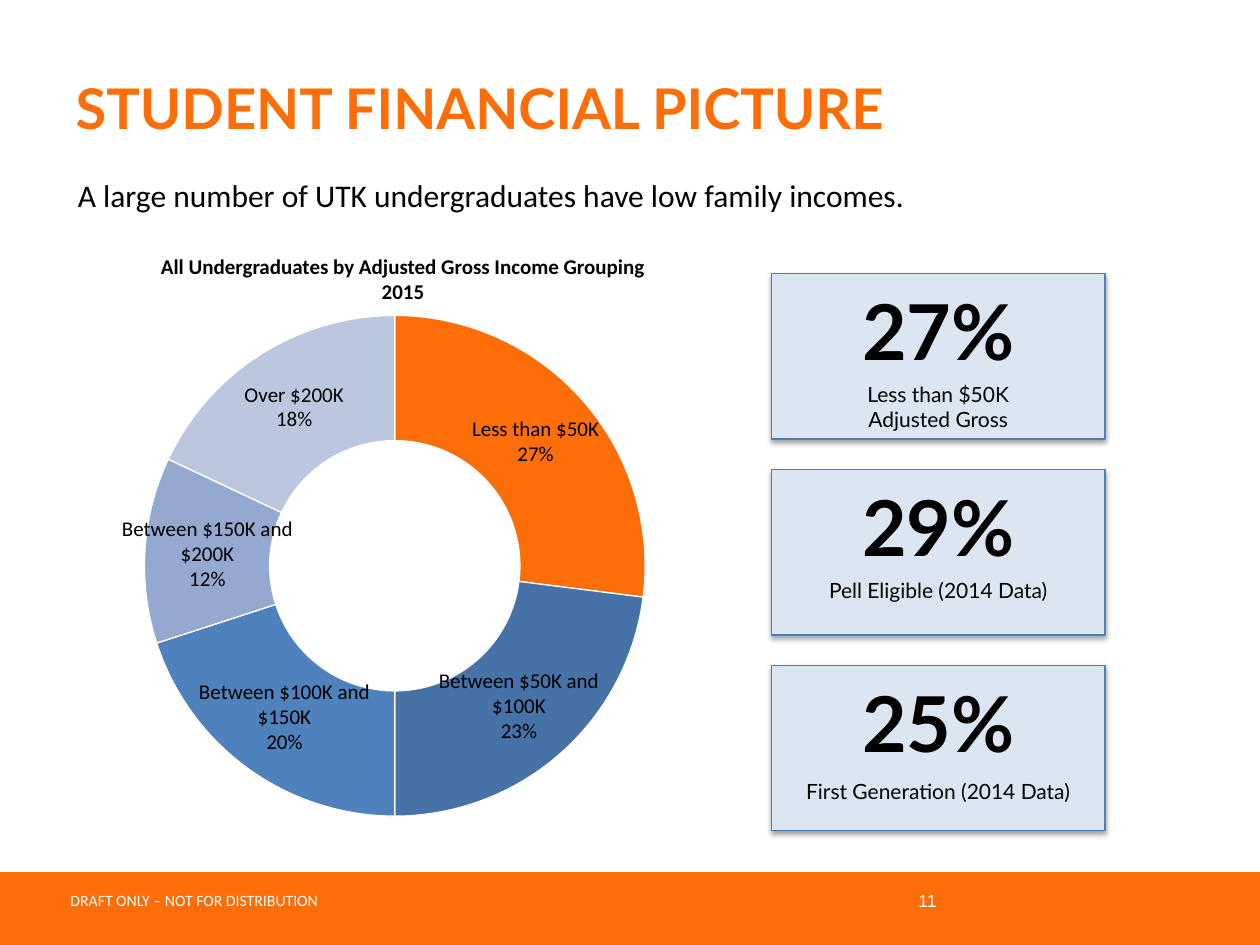
from lxml.etree import SubElement
from pptx import Presentation
from pptx.chart.data import CategoryChartData
from pptx.dml.color import RGBColor
from pptx.enum.chart import XL_CHART_TYPE
from pptx.enum.shapes import MSO_SHAPE
from pptx.enum.text import MSO_ANCHOR, PP_ALIGN
from pptx.oxml import parse_xml
from pptx.oxml.ns import nsdecls, qn
from pptx.util import Cm, Pt

COLORS = {"orange": "FD6D08", "navy": "4672A8", "blue": "4F81BD", "steel": "93A9CF",
          "mist": "BBC7DF", "card": "DCE6F2", "edge": "4B7EBC", "white": "FFFFFF",
          "black": "000000"}

TITLE = "STUDENT FINANCIAL PICTURE"
SUBTITLE = "A large number of UTK undergraduates have low family incomes."
CHART_TITLE = "All Undergraduates by Adjusted Gross Income Grouping\n2015"
FOOTER = "DRAFT ONLY – NOT FOR DISTRIBUTION"
PAGE = "11"
INCOMES = [("Less than $50K", 27, "orange"), ("Between $50K and $100K", 23, "navy"),
           ("Between $100K and $150K", 20, "blue"),
           ("Between $150K and $200K", 12, "steel"), ("Over $200K", 18, "mist")]
# label, caption and caption offset are listed per card
CARDS = [("27%", "Less than $50K\nAdjusted Gross", 2.05),
         ("29%", "Pell Eligible (2014 Data)", 2.05),
         ("25%", "First Generation (2014 Data)", 2.15)]
CARD_X, CARD_Y, CARD_W, CARD_H, CARD_STEP = 15.55, 5.52, 6.73, 3.33, 3.95
NUMBER_W, CAPTION_W = 4.78, 8.2
LAYOUT = {"xMode": "edge", "yMode": "edge", "x": 0.122, "y": 0.019, "w": 0.75, "h": 0.955}


def rgb(name):
    return RGBColor.from_string(COLORS[name])


def write(sp, text, size, font="Calibri", color="black", bold=False,
          align=PP_ALIGN.LEFT, anchor=MSO_ANCHOR.TOP, wrap=True):
    tf = sp.text_frame
    tf.text = text
    tf.word_wrap = wrap
    tf.vertical_anchor = anchor
    for p in tf.paragraphs:
        p.alignment = align
        for r in p.runs:
            r.font.size, r.font.name, r.font.bold = Pt(size), font, bold
            r.font.color.rgb = rgb(color)


def add_text(s, box, text, size, **style):
    write(s.shapes.add_textbox(*map(Cm, box)), text, size, **style)


def add_rect(s, box, fill, line=None):
    sp = s.shapes.add_shape(MSO_SHAPE.RECTANGLE, *map(Cm, box))
    sp.shadow.inherit = False
    sp.fill.solid()
    sp.fill.fore_color.rgb = rgb(fill)
    if line:
        sp.line.color.rgb = rgb(line)
        sp.line.width = Pt(0.75)
    else:
        sp.line.fill.background()
    return sp


def add_shadow(sp):
    effects = sp.element.spPr.find(qn("a:effectLst"))
    effects.append(parse_xml(
        f'<a:outerShdw {nsdecls("a")} blurRad="{Pt(3.1)}" dist="{Pt(1.8)}" dir="5400000" '
        f'rotWithShape="0"><a:srgbClr val="{COLORS["black"]}"><a:alpha val="35000"/>'
        '</a:srgbClr></a:outerShdw>'))


def add_doughnut(s):
    data = CategoryChartData()
    data.categories = [name for name, _, _ in INCOMES]
    data.add_series("Series 1", [value for _, value, _ in INCOMES])
    chart = s.shapes.add_chart(XL_CHART_TYPE.DOUGHNUT, Cm(1.27), Cm(6.15), Cm(13.46),
                               Cm(10.59), data).chart
    chart.has_legend = chart.has_title = False
    chart.font.size, chart.font.name = Pt(18), "Calibri"
    chart.font.color.rgb = rgb("black")
    plot = chart.plots[0]
    plot.vary_by_categories = True
    for i, (_, _, color) in enumerate(INCOMES):
        fmt = plot.series[0].points[i].format
        fmt.fill.solid()
        fmt.fill.fore_color.rgb = rgb(color)
        fmt.line.color.rgb = rgb("white")
        fmt.line.width = Pt(0.75)
    labels = plot.series[0].data_labels
    labels.show_category_name = labels.show_percentage = True
    labels.show_value = labels.show_legend_key = labels.show_series_name = False
    labels.font.size, labels.font.name = Pt(12), "Calibri"
    labels.font.color.rgb = rgb("black")
    separator = parse_xml(f'<c:separator {nsdecls("c")}>\n</c:separator>')
    dlbls = plot.series[0].format._element.find(qn("c:dLbls"))
    dlbls.find(qn("c:showBubbleSize")).addnext(separator)
    area = chart.element.find(".//" + qn("c:plotArea"))
    layout = area.find(qn("c:layout"))
    if layout is None:
        layout = parse_xml(f'<c:layout {nsdecls("c")}/>')
        area.insert(0, layout)
    manual = SubElement(layout, qn("c:manualLayout"))
    for tag, val in {"layoutTarget": "inner", **LAYOUT}.items():
        SubElement(manual, qn("c:" + tag)).set("val", str(val))
    area.find(".//" + qn("c:holeSize")).set("val", "50")


def main():
    """Build the student financial picture slide."""
    prs = Presentation()
    prs.slide_width, prs.slide_height = Cm(25.4), Cm(19.05)
    s = prs.slides.add_slide(prs.slide_layouts[5])
    title = s.shapes.title
    title.left, title.top, title.width, title.height = map(Cm, (1.27, 0.56, 23.85, 3.18))
    write(title, TITLE, 32, font="Lato", color="orange", bold=True, anchor=MSO_ANCHOR.MIDDLE)
    add_text(s, (1.32, 2.34, 22.83, 3.18), SUBTITLE, 18, anchor=MSO_ANCHOR.MIDDLE)

    add_rect(s, (0, 17.58, 25.4, 1.47), "orange")
    add_text(s, (1.17, 17.83, 5.59, 0.64), FOOTER, 9, color="white", wrap=False)
    add_text(s, (13.21, 17.65, 5.92, 1.02), PAGE, 10, font="Arial", color="white",
             align=PP_ALIGN.RIGHT, anchor=MSO_ANCHOR.MIDDLE)

    add_doughnut(s)
    add_text(s, (2.92, 4.98, 10.41, 1.27), CHART_TITLE, 12, bold=True,
             align=PP_ALIGN.CENTER, wrap=False)

    center = CARD_X + CARD_W / 2
    for i, (number, caption, offset) in enumerate(CARDS):
        top = CARD_Y + i * CARD_STEP
        add_shadow(add_rect(s, (CARD_X, top, CARD_W, CARD_H), "card", "edge"))
        add_text(s, (center - NUMBER_W / 2, top + 0.08, NUMBER_W, 2.13), number, 44,
                 font="Lato", bold=True, align=PP_ALIGN.CENTER)
        add_text(s, (center - CAPTION_W / 2, top + offset, CAPTION_W, 0.76), caption, 12,
                 font="Lato", align=PP_ALIGN.CENTER)
    prs.save("out.pptx")


if __name__ == "__main__":
    main()
